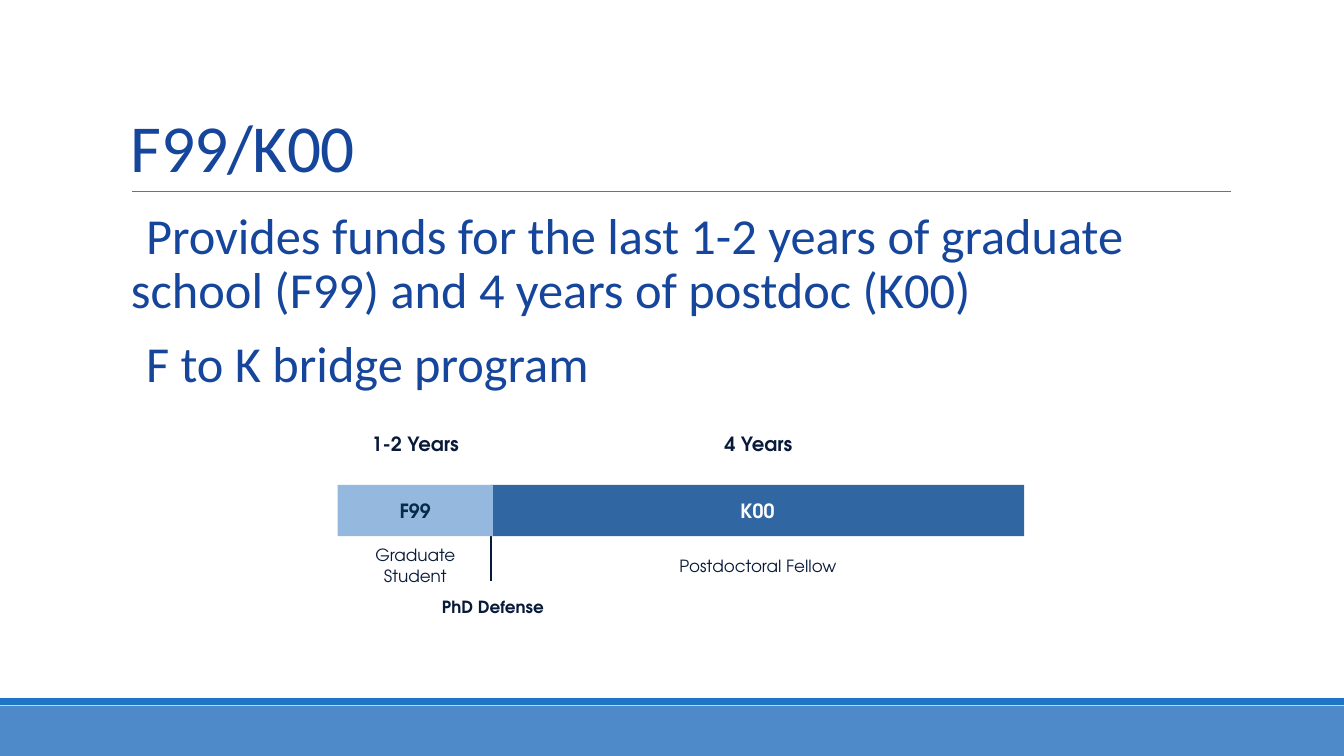
from dataclasses import dataclass
from typing import Optional

import lxml.etree
import pptx
import pptx.dml.color
import pptx.enum.shapes
import pptx.enum.text
import pptx.oxml.ns
import pptx.util

Pt = pptx.util.Pt
ALIGN = pptx.enum.text.PP_ALIGN
ANCHOR = pptx.enum.text.MSO_ANCHOR

COLORS = {
    "background": "FFFFFF",
    "footer": "4E89CA",
    "footer_edge": "1C75C6",
    "rule": "3C78E4",
    "heading": "15469C",
    "ink": "081A3A",
    "graduate": "95B8DF",
    "graduate_text": "062B4B",
    "postdoc": "3066A2",
    "white": "FFFFFF",
}
HEADING_FONT = "Calibri"
DIAGRAM_FONT = "TeX Gyre Adventor"


@dataclass
class Bar:
    left: float
    top: float
    width: float
    height: float
    fill: str
    text: str = ""
    color: str = "white"


@dataclass
class Label:
    text: str
    left: float
    top: float
    width: float
    height: float
    size: float
    bold: bool = False


@dataclass
class Rule:
    start: tuple[float, float]
    end: tuple[float, float]
    color: str
    weight: float


def rgb(name: str) -> pptx.dml.color.RGBColor:
    return pptx.dml.color.RGBColor.from_string(COLORS[name])


def add_run(paragraph, text: str, font: str, size: float, color: str, bold: bool = False):
    run = paragraph.add_run()
    run.text = text
    run.font.name = font
    run.font.size = Pt(size)
    run.font.bold = bold
    run.font.color.rgb = rgb(color)
    return run


def add_frame(slide, left: float, top: float, width: float, height: float):
    shape = slide.shapes.add_textbox(Pt(left), Pt(top), Pt(width), Pt(height))
    shape.text_frame.word_wrap = True
    return shape.text_frame


def draw_bar(slide, bar: Bar) -> None:
    shape = slide.shapes.add_shape(
        pptx.enum.shapes.MSO_SHAPE.RECTANGLE,
        Pt(bar.left), Pt(bar.top), Pt(bar.width), Pt(bar.height),
    )
    shape.shadow.inherit = False
    shape.fill.solid()
    shape.fill.fore_color.rgb = rgb(bar.fill)
    shape.line.fill.background()
    if bar.text:
        shape.text_frame.vertical_anchor = ANCHOR.MIDDLE
        paragraph = shape.text_frame.paragraphs[0]
        paragraph.alignment = ALIGN.CENTER
        add_run(paragraph, bar.text, DIAGRAM_FONT, 14, bar.color, True)


def draw_label(slide, label: Label) -> None:
    frame = add_frame(slide, label.left, label.top, label.width, label.height)
    paragraph = frame.paragraphs[0]
    paragraph.alignment = ALIGN.CENTER
    add_run(paragraph, label.text, DIAGRAM_FONT, label.size, "ink", label.bold)


def draw_rule(slide, rule: Rule) -> None:
    connector = slide.shapes.add_connector(
        pptx.enum.shapes.MSO_CONNECTOR.STRAIGHT,
        *(Pt(value) for value in rule.start + rule.end),
    )
    connector.line.color.rgb = rgb(rule.color)
    connector.line.width = Pt(rule.weight)
    properties = connector._element.spPr
    lxml.etree.SubElement(properties, pptx.oxml.ns.qn("a:effectLst"))


def draw_title(slide, text: str) -> None:
    frame = add_frame(slide, 86.4, 22.3, 792, 114.5)
    frame.vertical_anchor = ANCHOR.BOTTOM
    paragraph = frame.paragraphs[0]
    paragraph.line_spacing = 0.85
    run = add_run(paragraph, text, HEADING_FONT, 48, "heading")
    run.font._element.set("spc", "-50")


def add_blank_bullet(paragraph, indent: Optional[float] = 7.2) -> None:
    properties = paragraph._p.get_or_add_pPr()
    properties.set("marL", str(Pt(indent)))
    properties.set("indent", str(-Pt(indent)))
    bullet = lxml.etree.SubElement(properties, pptx.oxml.ns.qn("a:buChar"))
    bullet.set("char", " ")


def draw_body(slide, texts: list[str]) -> None:
    frame = add_frame(slide, 86.4, 146.9, 792, 316.8)
    frame.margin_left = frame.margin_right = Pt(0)
    for index, text in enumerate(texts):
        paragraph = frame.add_paragraph() if index else frame.paragraphs[0]
        paragraph.line_spacing = 0.9
        paragraph.space_before = Pt(12)
        paragraph.space_after = Pt(2)
        add_blank_bullet(paragraph)
        add_run(paragraph, text, HEADING_FONT, 36, "heading")


FOOTER = [
    Bar(0, 504, 960, 36, "footer"),
    Bar(0, 498.7, 960, 4.8, "footer_edge"),
]
LABELS = [
    Label("1-2 Years", 241.2, 305.3, 110.9, 24.5, 14, True),
    Label("4 Years", 488.9, 305.3, 105.8, 24.5, 14, True),
    Label("Graduate Student", 241.2, 385.9, 110.9, 36, 12),
    Label("Postdoctoral Fellow", 475.2, 393.1, 132.5, 21.6, 12),
    Label("PhD Defense", 288, 422.6, 128.2, 21.6, 12, True),
]
PHASES = [
    Bar(350.6, 346.3, 380.9, 36.7, "postdoc", "K00"),
    Bar(241.2, 346.3, 110.9, 36.7, "graduate", "F99", "graduate_text"),
]
TITLE_RULE = Rule((94.3, 136.8), (879.1, 136.8), "rule", 0.5)
DEFENSE_RULE = Rule((350.6, 355.7), (350.6, 414.7), "ink", 1)


def main() -> None:
    presentation = pptx.Presentation()
    presentation.slide_width = Pt(960)
    presentation.slide_height = Pt(540)
    slide = presentation.slides.add_slide(presentation.slide_layouts[6])
    slide.background.fill.solid()
    slide.background.fill.fore_color.rgb = rgb("background")
    for bar in FOOTER:
        draw_bar(slide, bar)
    draw_rule(slide, TITLE_RULE)
    draw_title(slide, "F99/K00")
    draw_body(slide, [
        "Provides funds for the last 1-2 years of graduate school (F99) and 4 years of postdoc (K00)",
        "F to K bridge program",
    ])
    for label in LABELS:
        draw_label(slide, label)
    draw_rule(slide, DEFENSE_RULE)
    for bar in PHASES:
        draw_bar(slide, bar)
    presentation.save("out.pptx")


if __name__ == "__main__":
    main()
